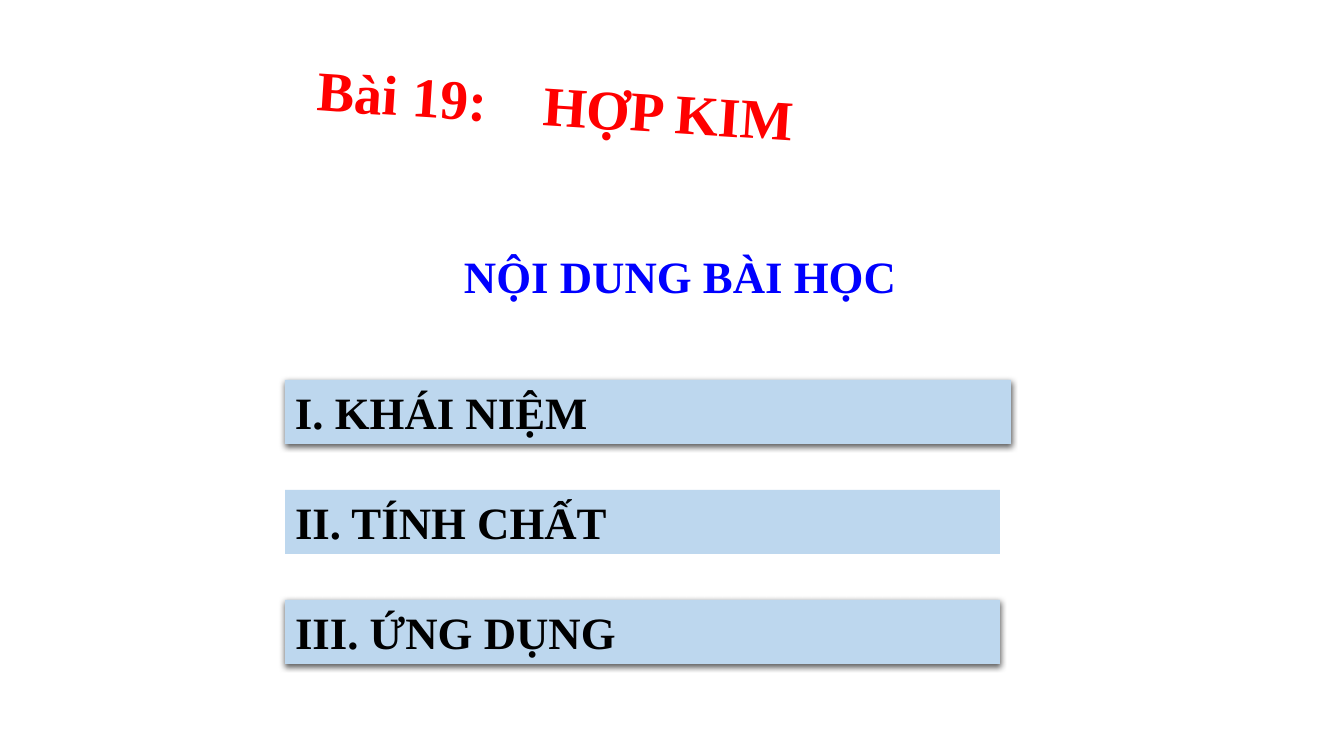
from dataclasses import dataclass

from lxml.etree import SubElement
from pptx import Presentation
from pptx.dml.color import RGBColor
from pptx.enum.shapes import MSO_SHAPE as Shape
from pptx.enum.text import MSO_ANCHOR as Anchor, PP_ALIGN as Align
from pptx.oxml.ns import qn
from pptx.util import Pt

EMU_PER_PX = 914400 / 100.8


@dataclass(frozen=True)
class Theme:
    font: str = "Times New Roman"
    title: str = "FF0000"
    heading: str = "0000FF"
    ink: str = "000000"
    bar: str = "BDD7EE"
    title_size: int = 40
    body_size: int = 32


theme = Theme()


def px(length):
    return round(length * EMU_PER_PX)


def add_text(text, left, top, width, height, color, size=theme.body_size, fill=None, inset=10):
    box = page.shapes.add_shape(Shape.RECTANGLE, px(left), px(top), px(width), px(height))
    box.shadow.inherit = False
    box.line.fill.background()
    if fill:
        box.fill.solid()
        box.fill.fore_color.rgb = RGBColor.from_string(fill)
    else:
        box.fill.background()
    frame = box.text_frame
    frame.word_wrap = True
    frame.vertical_anchor = Anchor.TOP
    frame.margin_left = px(inset)
    para = frame.paragraphs[0]
    para.alignment = Align.LEFT
    span = para.add_run()
    span.text = text
    span.font.name = theme.font
    span.font.size = Pt(size)
    span.font.bold = True
    span.font.color.rgb = RGBColor.from_string(color)
    return box


deck = Presentation()
deck.slide_width, deck.slide_height = px(1344), px(756)
page = deck.slides.add_slide(deck.slide_layouts[6])

# Section bars: text, width, shadowed
sections = [
    ("I. KHÁI NIỆM", 726, True),
    ("II. TÍNH CHẤT", 715, False),
    ("III. ỨNG DỤNG", 715, True),
]
for index, (name, width, shadowed) in enumerate(sections):
    bar = add_text(name, 285, 380 + 110 * index, width, 64, theme.ink, fill=theme.bar)
    if shadowed:
        effects = bar.element.spPr.find(qn("a:effectLst"))
        shadow = SubElement(effects, qn("a:outerShdw"), blurRad=str(Pt(4.5)),
                            dist=str(Pt(1.5)), dir="5400000", algn="t", rotWithShape="0")
        shade = SubElement(shadow, qn("a:srgbClr"), val=theme.ink)
        SubElement(shade, qn("a:alpha"), val="63000")

# Heading
add_text("NỘI DUNG BÀI HỌC", 454, 244, 454, 64, theme.heading)

# Tilted title, its two parts set apart by a tab stop
title = add_text("Bài 19:\tHỢP KIM", 3, 65, 1099, 193, theme.title,
                 size=theme.title_size, inset=311)
title.rotation = 3.7
para_format = title.text_frame.paragraphs[0]._p.get_or_add_pPr()
tab_stops = SubElement(para_format, qn("a:tabLst"))
SubElement(tab_stops, qn("a:tab"), pos=str(px(226)), algn="l")

deck.save("out.pptx")
